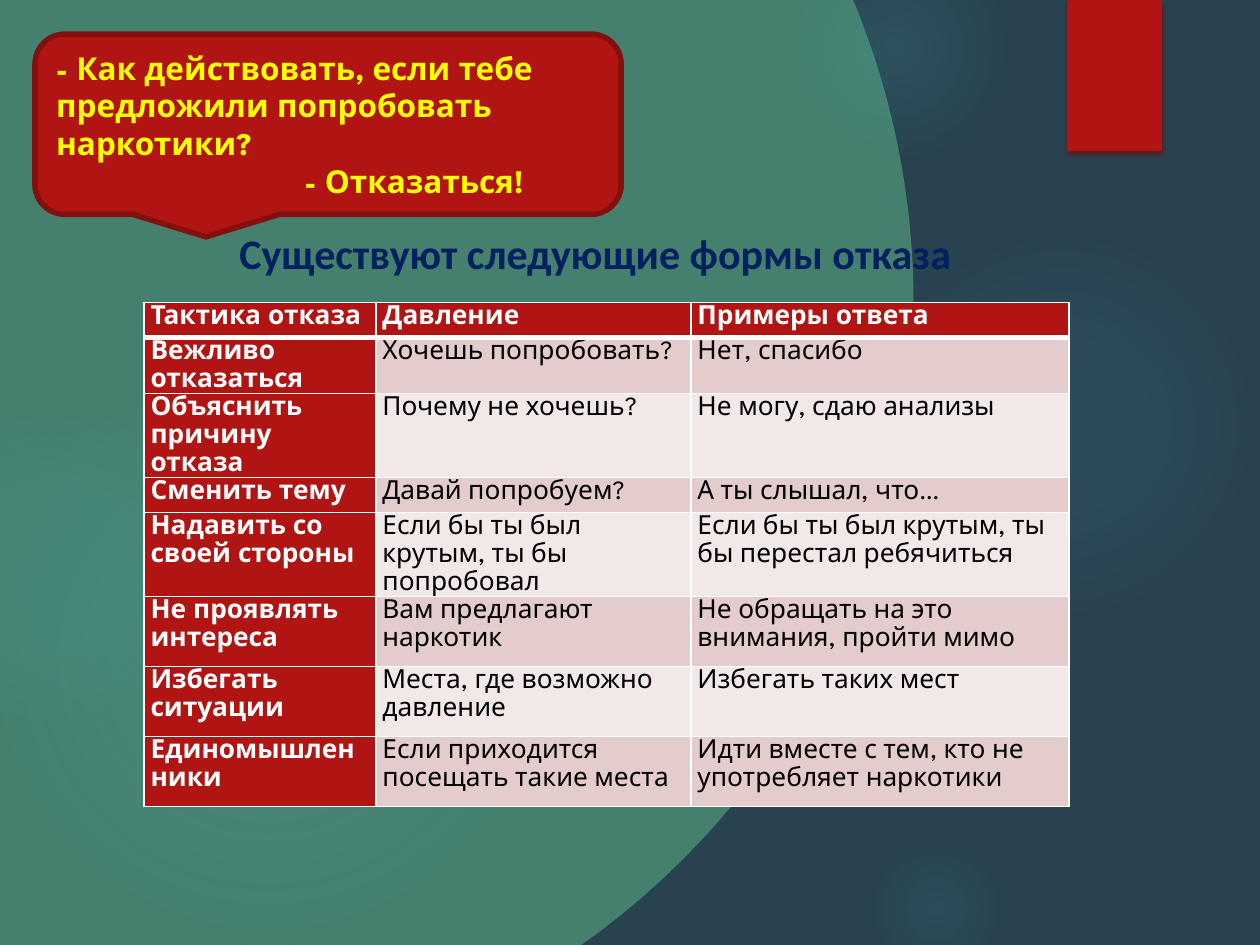
from lxml import etree
from pptx import Presentation
from pptx.dml.color import RGBColor
from pptx.enum.shapes import MSO_SHAPE
from pptx.enum.text import MSO_ANCHOR, MSO_AUTO_SIZE, PP_ALIGN
from pptx.oxml import parse_xml
from pptx.oxml.ns import nsdecls, qn
from pptx.util import Pt

OVAL = MSO_SHAPE.OVAL
RECTANGLE = MSO_SHAPE.RECTANGLE
CALLOUT = MSO_SHAPE.ROUNDED_RECTANGULAR_CALLOUT
MIDDLE = MSO_ANCHOR.MIDDLE
LEFT, CENTER = PP_ALIGN.LEFT, PP_ALIGN.CENTER
GROW = MSO_AUTO_SIZE.SHAPE_TO_FIT_TEXT

RED, DARK_RED, WHITE, BLACK = "B01513", "82100E", "FFFFFF", "000000"
YELLOW, NAVY, GLOW = "FFFF00", "002060", "50B9C1"
BANDS = ["E4CCCC", "F2E8E7"]
BODY_FONT = "League Spartan"


def rgb(value):
    return RGBColor.from_string(value)


def set_radial_fill(owner, stops, focus):
    owner.fill.solid()
    element = slide.element.cSld if owner is slide.background else owner.element
    solid = element.find(".//" + qn("a:solidFill"))
    stop_xml = "".join(
        f'<a:gs pos="{pos * 1000}"><a:srgbClr val="{color}">'
        f'<a:alpha val="{alpha * 1000}"/></a:srgbClr></a:gs>'
        for pos, color, alpha in stops)
    left, top, right, bottom = (side * 1000 for side in focus)
    solid.getparent().replace(solid, parse_xml(
        f'<a:gradFill {nsdecls("a")} rotWithShape="1"><a:gsLst>{stop_xml}</a:gsLst>'
        f'<a:path path="circle"><a:fillToRect l="{left}" t="{top}" r="{right}" '
        f'b="{bottom}"/></a:path></a:gradFill>'))


prs = Presentation()
prs.slide_width, prs.slide_height = Pt(720), Pt(540)
slide = prs.slides.add_slide(prs.slide_layouts[6])
set_radial_fill(slide.background, [(100, "457F6E", 100), (100, "294250", 100)],
                (45, 65, 125, 100))

glows = [
    (496, 132, 222, [(0, 7), (36, 6), (69, 0)]),
    (448, -36, 126, [(0, 14), (36, 7), (73, 0)]),
    (496, 480, 78, [(0, 9), (36, 5), (66, 0)]),
    (-12, 210, 330, [(0, 11), (36, 10), (75, 0)]),
    (-66, 228, 186, [(0, 8), (36, 8), (72, 0)]),
]
for left, top, size, stops in glows:
    glow = slide.shapes.add_shape(OVAL, Pt(left), Pt(top), Pt(size), Pt(size))
    glow.shadow.inherit = False
    set_radial_fill(glow, [(pos, GLOW, alpha) for pos, alpha in stops], (50,) * 4)
    glow.line.fill.background()

ribbon = slide.shapes.add_shape(RECTANGLE, Pt(610), Pt(0), Pt(54), Pt(86.4))
ribbon.shadow.inherit = False
ribbon.fill.solid()
ribbon.fill.fore_color.rgb = rgb(RED)
ribbon.line.fill.background()
ribbon.element.spPr.find(qn("a:effectLst")).append(parse_xml(
    f'<a:outerShdw {nsdecls("a")} blurRad="{Pt(3.1)}" dist="{Pt(2)}" dir="5400000" '
    'rotWithShape="0"><a:srgbClr val="6D0D0C"><a:alpha val="83000"/></a:srgbClr>'
    '</a:outerShdw>'))

refusals = [
    ("Тактика отказа", "Давление", "Примеры ответа"),
    ("Вежливо отказаться", "Хочешь попробовать?", "Нет, спасибо"),
    ("Объяснить причину отказа", "Почему не хочешь?", "Не могу, сдаю анализы"),
    ("Сменить тему", "Давай попробуем?", "А ты слышал, что…"),
    ("Надавить со своей стороны", "Если бы ты был крутым, ты бы попробовал",
     "Если бы ты был крутым, ты бы перестал ребячиться"),
    ("Не проявлять интереса", "Вам предлагают наркотик",
     "Не обращать на это внимания, пройти мимо"),
    ("Избегать ситуации", "Места, где возможно давление", "Избегать таких мест"),
    ("Единомышленники", "Если приходится посещать такие места",
     "Идти вместе с тем, кто не употребляет наркотики"),
]
row_heights = [20, 20, 40, 20, 40, 40, 40, 40]
column_widths = [132.5, 180, 216]
table = slide.shapes.add_table(len(refusals), 3, Pt(82.3), Pt(172.8),
                               Pt(sum(column_widths)), Pt(sum(row_heights))).table
for column, width in zip(table.columns, column_widths):
    column.width = Pt(width)
for r, (answers, height) in enumerate(zip(refusals, row_heights)):
    table.rows[r].height = Pt(height)
    for c, answer in enumerate(answers):
        heading = r == 0 or c == 0
        cell = table.cell(r, c)
        cell.margin_left = cell.margin_right = Pt(3.75)
        cell.margin_top = cell.margin_bottom = 0
        cell.fill.solid()
        cell.fill.fore_color.rgb = rgb(RED if heading else BANDS[(r - 1) % 2])
        paragraph = cell.text_frame.paragraphs[0]
        paragraph.text = answer
        paragraph.line_spacing = 1.15
        paragraph.font.name = BODY_FONT
        paragraph.font.size = Pt(15)
        paragraph.font.bold = heading
        paragraph.font.color.rgb = rgb(WHITE if heading else BLACK)
        cell_properties = cell._tc.get_or_add_tcPr()
        for order, side in enumerate("LRTB"):
            under_header = (r, side) in [(0, "B"), (1, "T")]
            border = etree.Element(qn(f"a:ln{side}"), w=str(Pt(3 if under_header else 1)))
            color = etree.SubElement(border, qn("a:solidFill"))
            etree.SubElement(color, qn("a:srgbClr"), val=WHITE)
            cell_properties.insert(order, border)

heading_box = slide.shapes.add_textbox(Pt(127.4), Pt(122.4), Pt(425.5), Pt(38.9))
heading_box.text_frame.word_wrap = False
heading_box.text_frame.auto_size = GROW
title = heading_box.text_frame.paragraphs[0]
title.text = "Существуют следующие формы отказа"
title.alignment = CENTER
title.line_spacing = 1.15
title.space_after = Pt(10)
title.font.name = "Calibri"
title.font.size = Pt(24)
title.font.bold = True
title.font.color.rgb = rgb(NAVY)

callout = slide.shapes.add_shape(CALLOUT, Pt(20), Pt(19.5), Pt(335), Pt(103))
callout.shadow.inherit = False
callout.fill.solid()
callout.fill.fore_color.rgb = rgb(RED)
callout.line.color.rgb = rgb(DARK_RED)
callout.line.width = Pt(3.15)
callout.text_frame.word_wrap = True
callout.text_frame.vertical_anchor = MIDDLE
callout.text_frame.text = ("- Как действовать, если тебе предложили попробовать наркотики?\n"
                           "- Отказаться!")
for line in callout.text_frame.paragraphs:
    line.alignment = LEFT
    line.font.name = BODY_FONT
    line.font.size = Pt(18)
    line.font.bold = True
    line.font.color.rgb = rgb(YELLOW)
line._p.get_or_add_pPr().set("marL", str(Pt(142)))

prs.save("out.pptx")
